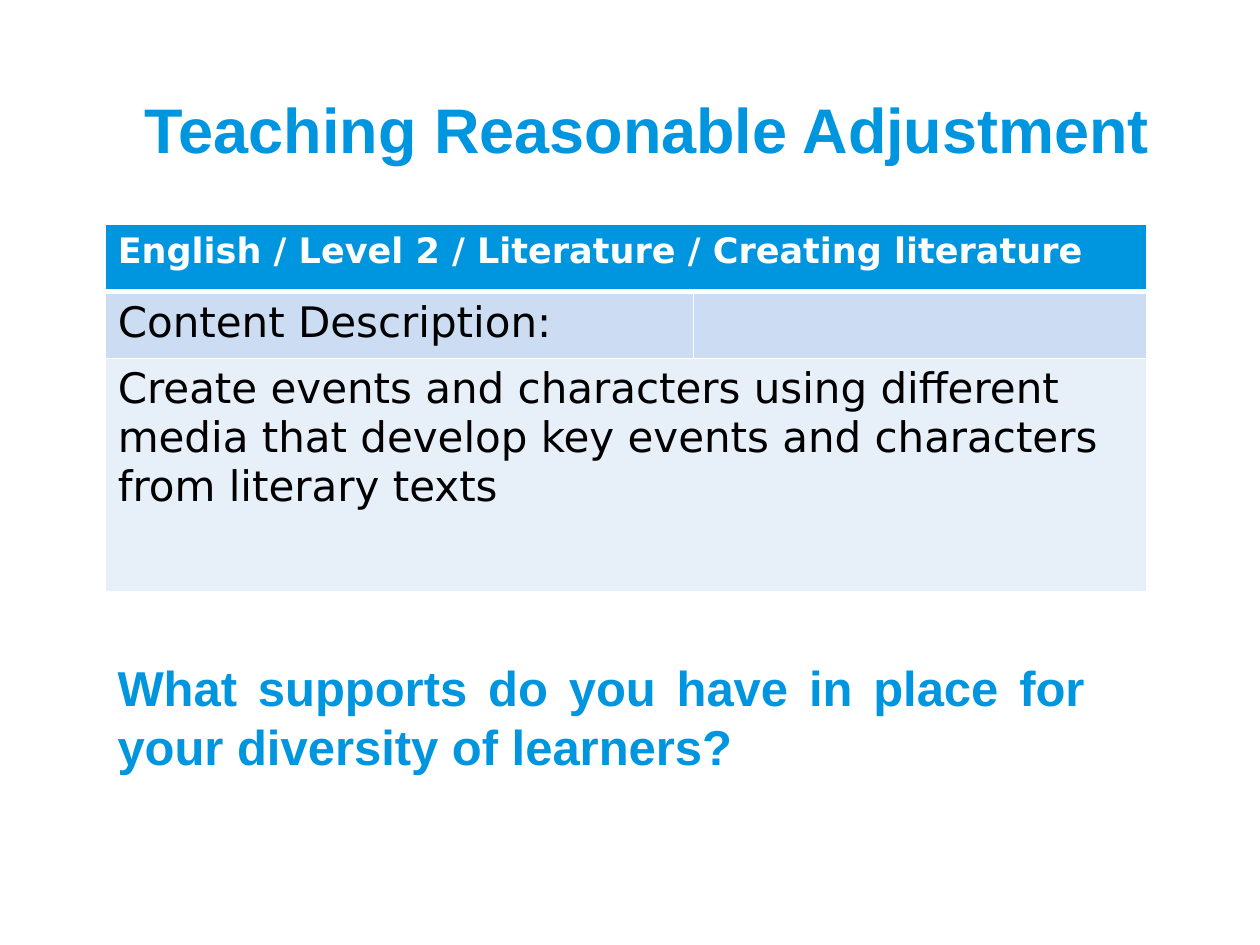
"""Build the Teaching Reasonable Adjustment slide."""
import dataclasses

import lxml.etree
import pptx
import pptx.dml.color
import pptx.enum.text
import pptx.oxml.ns
import pptx.util

Cm = pptx.util.Cm
Align = pptx.enum.text.PP_ALIGN
Anchor = pptx.enum.text.MSO_ANCHOR


@dataclasses.dataclass(frozen=True)
class Theme:
    """Colours, fonts and type sizes."""
    accent: str = "0096DF"
    white: str = "FFFFFF"
    black: str = "000000"
    band_dark: str = "CCDDF3"
    band_light: str = "E7EFF9"
    heading_font: str = "Arial"
    table_font: str = "DejaVu Sans"
    title_size: int = 36
    question_size: int = 28
    body_size: int = 24
    header_size: int = 20
    thin: int = 1
    thick: int = 3


class SlideBuilder:
    """Hold the theme and the current slide."""

    def __init__(self, page, theme):
        """Keep the page and its style."""
        self.page = page
        self.theme = theme

    def set_text(self, frame, text, font, size, color, bold=False, align=Align.LEFT):
        """Fill a text frame with one styled paragraph."""
        frame.text = text
        frame.word_wrap = True
        para = frame.paragraphs[0]
        para.alignment = align
        for span in para.runs:
            span.font.name = font
            span.font.size = pptx.util.Pt(size)
            span.font.bold = bold
            span.font.color.rgb = pptx.dml.color.RGBColor.from_string(color)

    def title(self, text, left, top, width, height):
        """Place and format the title placeholder."""
        box = self.page.shapes.title
        box.left, box.top, box.width, box.height = left, top, width, height
        box.text_frame.vertical_anchor = Anchor.MIDDLE
        self.set_text(box.text_frame, text, self.theme.heading_font,
                      self.theme.title_size, self.theme.accent, True, Align.CENTER)

    def border(self, cell, bottom):
        """Draw white borders, with the bottom one of the given weight."""
        properties = cell._tc.get_or_add_tcPr()
        for side in "LRTB":
            weight = bottom if side == "B" else self.theme.thin
            line = lxml.etree.SubElement(
                properties, pptx.oxml.ns.qn(f"a:ln{side}"), w=str(pptx.util.Pt(weight)))
            fill = lxml.etree.SubElement(line, pptx.oxml.ns.qn("a:solidFill"))
            lxml.etree.SubElement(fill, pptx.oxml.ns.qn("a:srgbClr"), val=self.theme.white)

    def table(self, rows, left, top, widths, heights):
        """Add a table; a row with one text spans every column."""
        theme = self.theme
        grid = self.page.shapes.add_table(
            len(heights), len(widths), left, top, sum(widths), sum(heights)).table
        for column, width in zip(grid.columns, widths):
            column.width = width
        fills = (theme.accent, theme.band_dark, theme.band_light)
        for index, (texts, height, fill) in enumerate(zip(rows, heights, fills)):
            grid.rows[index].height = height
            header = index == 0
            for position in range(len(widths)):
                cell = grid.cell(index, position)
                self.border(cell, theme.thick if header else theme.thin)
                cell.fill.solid()
                cell.fill.fore_color.rgb = pptx.dml.color.RGBColor.from_string(fill)
            if len(texts) == 1:
                grid.cell(index, 0).merge(grid.cell(index, len(widths) - 1))
            for position, text in enumerate(texts):
                self.set_text(grid.cell(index, position).text_frame, text, theme.table_font,
                              theme.header_size if header else theme.body_size,
                              theme.white if header else theme.black, header)

    def question(self, text, left, top, width, height):
        """Add a justified question on a white box."""
        box = self.page.shapes.add_textbox(left, top, width, height)
        box.fill.solid()
        box.fill.fore_color.rgb = pptx.dml.color.RGBColor.from_string(self.theme.white)
        self.set_text(box.text_frame, text, self.theme.heading_font,
                      self.theme.question_size, self.theme.accent, True, Align.JUSTIFY)
        box.text_frame.auto_size = pptx.enum.text.MSO_AUTO_SIZE.SHAPE_TO_FIT_TEXT


def main():
    """Create and save the deck."""
    deck = pptx.Presentation()
    deck.slide_width, deck.slide_height = Cm(25.4), Cm(19.05)
    builder = SlideBuilder(deck.slides.add_slide(deck.slide_layouts[5]), Theme())
    margin = Cm(2.12)
    builder.title("Teaching Reasonable Adjustment", Cm(1.7), Cm(1.73), Cm(22.7), Cm(1.73))
    builder.table(
        [["English / Level 2 / Literature / Creating literature"],
         ["Content Description:", ""],
         ["Create events and characters using different media that develop "
          "key events and characters from literary texts"]],
        margin, Cm(4.53), [Cm(11.86), Cm(9.14)], [Cm(1.35), Cm(1.35), Cm(4.7)])
    builder.question("What supports do you have in place for your diversity of learners?",
                     margin, Cm(13.13), Cm(20), Cm(2.64))
    deck.save("out.pptx")


if __name__ == "__main__":
    main()
